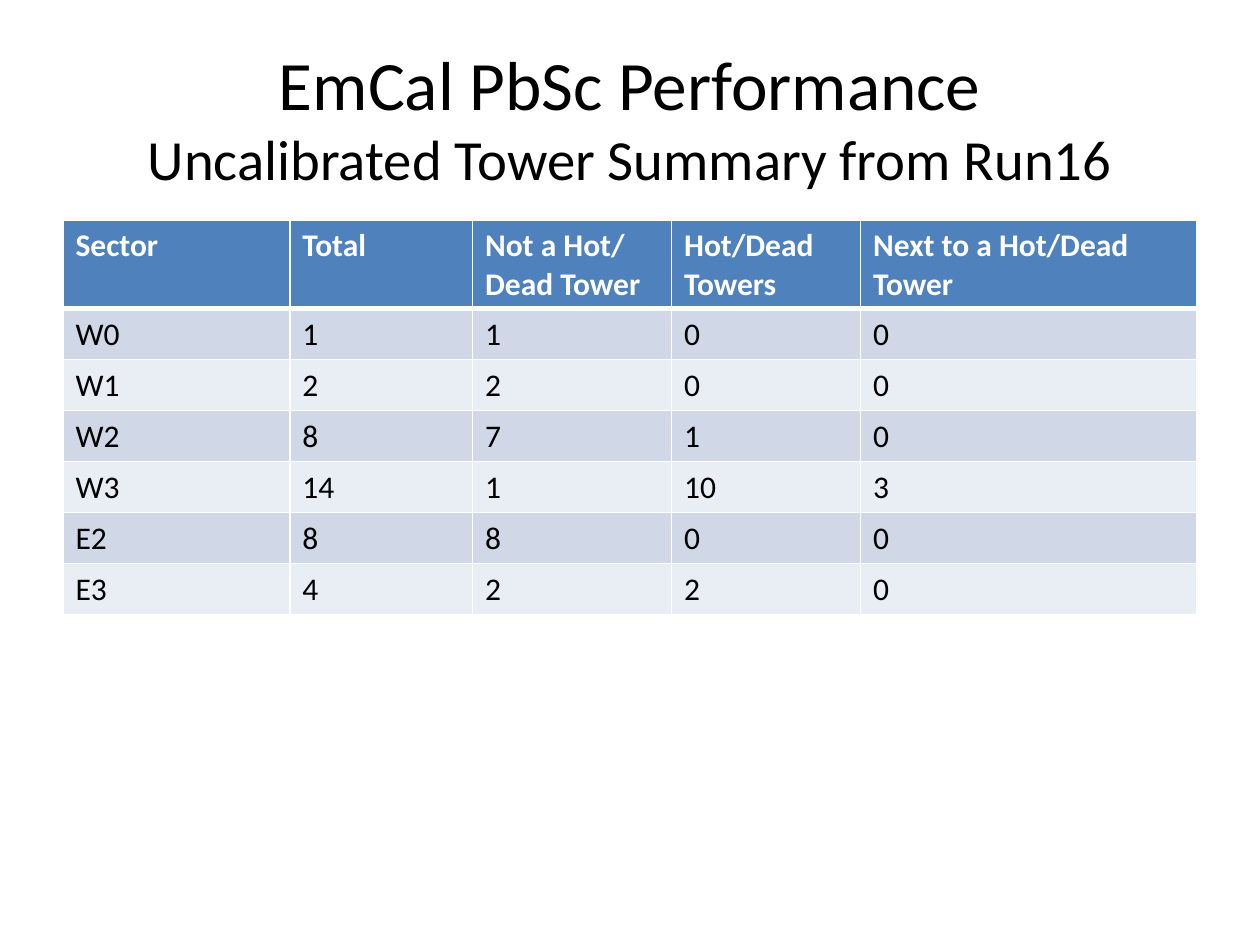
from lxml import etree
from pptx import Presentation
from pptx.dml.color import RGBColor
from pptx.enum.text import MSO_ANCHOR, PP_ALIGN
from pptx.oxml.ns import qn
from pptx.util import Inches, Pt

MIDDLE = MSO_ANCHOR.MIDDLE
CENTER = PP_ALIGN.CENTER

# Content
FONT = "Calibri"
COLORS = {
    "text": "000000",
    "header_text": "FFFFFF",
    "header": "4F81BD",
    "odd_row": "D0D8E8",
    "even_row": "E9EDF4",
    "border": "FFFFFF",
}
TITLE_LINES = [
    ("EmCal PbSc Performance", 39.6),
    ("Uncalibrated Tower Summary from Run16", 32.4),
]
# Each header is a list of paragraphs
HEADERS = [
    ["Sector"],
    ["Total"],
    ["Not a Hot/", "Dead Tower"],
    ["Hot/Dead Towers"],
    ["Next to a Hot/Dead Tower"],
]
TOWERS = [
    ("W0", 1, 1, 0, 0),
    ("W1", 2, 2, 0, 0),
    ("W2", 8, 7, 1, 0),
    ("W3", 14, 1, 10, 3),
    ("E2", 8, 8, 0, 0),
    ("E3", 4, 2, 2, 0),
]
COLUMN_WIDTHS = [1.8, 1.45, 1.58, 1.5, 2.67]
HEADER_HEIGHT = 0.7
ROW_HEIGHT = 0.405


def add_run(paragraph, text, size, color, bold=False):
    run = paragraph.add_run()
    run.text = text
    run.font.name = FONT
    run.font.size = Pt(size)
    run.font.bold = bold
    run.font.color.rgb = RGBColor.from_string(COLORS[color])


def set_borders(cell, bottom_width):
    properties = cell._tc.get_or_add_tcPr()
    for side, width in (("L", 1), ("R", 1), ("T", 1), ("B", bottom_width)):
        line = etree.SubElement(properties, qn(f"a:ln{side}"), w=str(Pt(width)))
        fill = etree.SubElement(line, qn("a:solidFill"))
        etree.SubElement(fill, qn("a:srgbClr"), val=COLORS["border"])


def fill_cell(cell, lines, fill, text_color, bold, bottom_width):
    set_borders(cell, bottom_width)
    cell.fill.solid()
    cell.fill.fore_color.rgb = RGBColor.from_string(COLORS[fill])
    frame = cell.text_frame
    for index, line in enumerate(lines):
        paragraph = frame.add_paragraph() if index else frame.paragraphs[0]
        add_run(paragraph, line, 18, text_color, bold)


def add_title(slide):
    box = slide.shapes.add_textbox(Inches(0.5), Inches(0.3), Inches(9), Inches(1.25))
    frame = box.text_frame
    frame.word_wrap = True
    frame.vertical_anchor = MIDDLE
    paragraph = frame.paragraphs[0]
    paragraph.alignment = CENTER
    for index, (text, size) in enumerate(TITLE_LINES):
        if index:
            paragraph.add_line_break()
        add_run(paragraph, text, size, "text")


def add_tower_table(slide):
    height = HEADER_HEIGHT + ROW_HEIGHT * len(TOWERS)
    table = slide.shapes.add_table(
        len(TOWERS) + 1, len(HEADERS),
        Inches(0.5), Inches(1.75), Inches(sum(COLUMN_WIDTHS)), Inches(height),
    ).table
    for column, width in zip(table.columns, COLUMN_WIDTHS):
        column.width = Inches(width)
    for index, row in enumerate(table.rows):
        row.height = Inches(ROW_HEIGHT if index else HEADER_HEIGHT)

    # Header row
    for column, lines in enumerate(HEADERS):
        fill_cell(table.cell(0, column), lines, "header", "header_text", True, 3)

    # Banded rows, one per sector
    for row, values in enumerate(TOWERS, start=1):
        fill = "odd_row" if row % 2 else "even_row"
        for column, value in enumerate(values):
            fill_cell(table.cell(row, column), [str(value)], fill, "text", False, 1)


def main():
    presentation = Presentation()
    presentation.slide_width = Inches(10)
    presentation.slide_height = Inches(7.5)
    slide = presentation.slides.add_slide(presentation.slide_layouts[6])
    add_title(slide)
    add_tower_table(slide)
    presentation.save("out.pptx")


if __name__ == "__main__":
    main()
